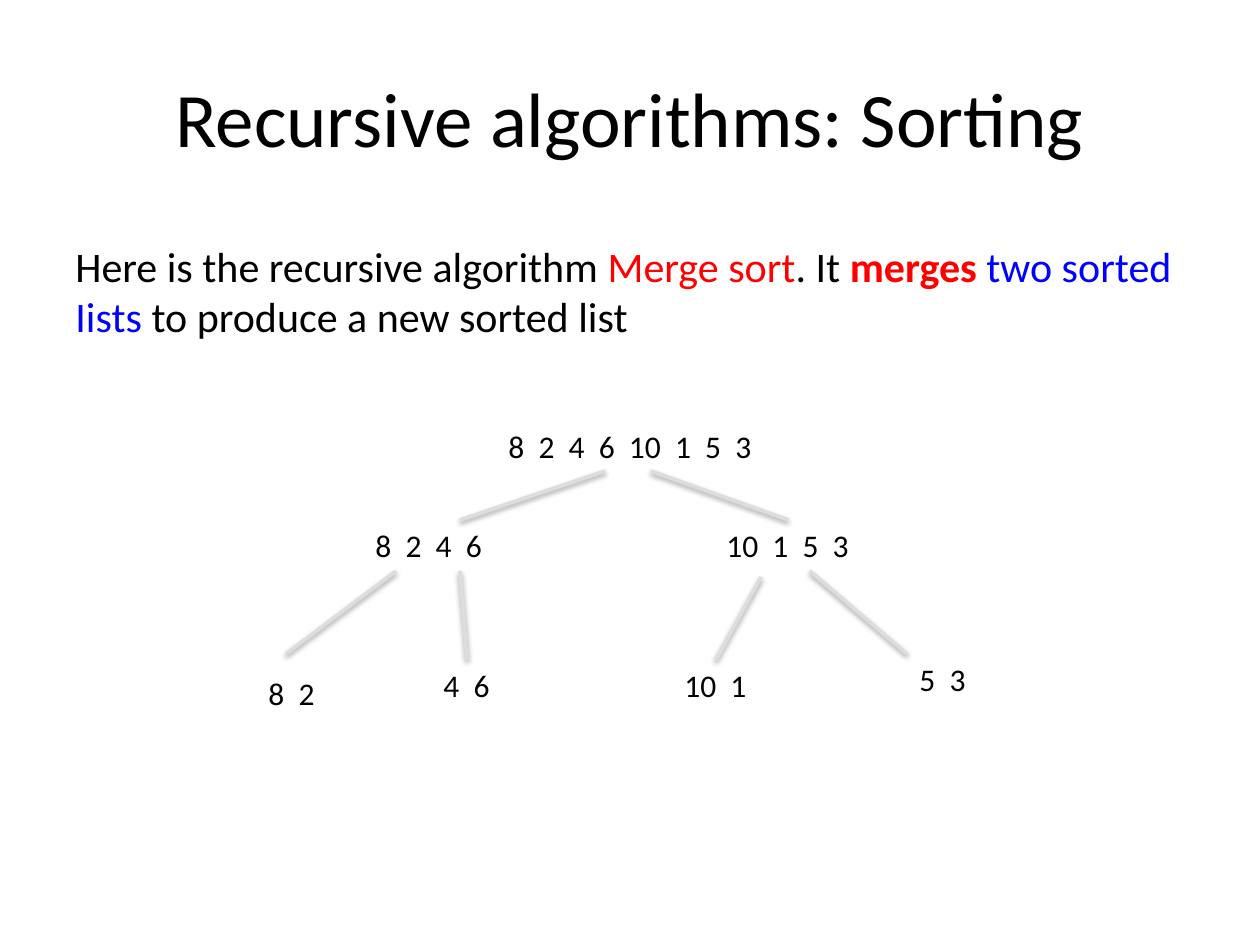
"""Build the merge sort slide with its tree of list splits."""
from lxml.etree import fromstring
from pptx import Presentation
from pptx.dml.color import RGBColor
from pptx.enum.shapes import MSO_CONNECTOR
from pptx.enum.text import MSO_ANCHOR, PP_ALIGN
from pptx.oxml.ns import nsdecls
from pptx.util import Emu, Pt

COLORS = {"black": "000000", "red": "FF0000", "blue": "0000FF", "branch": "DDDDDD"}
FONT = "Calibri"
SHADOW = (
    f'<a:effectLst {nsdecls("a")}>'
    '<a:outerShdw blurRad="40000" dist="20000" dir="5400000" rotWithShape="0">'
    f'<a:srgbClr val="{COLORS["black"]}"><a:alpha val="38000"/></a:srgbClr>'
    "</a:outerShdw></a:effectLst>"
)


def px(*lengths):
    return [Emu(round(n * 914400 / 126)) for n in lengths]


def style(font, size, color="black"):
    font.name, font.size = FONT, Pt(size)
    font.color.rgb = RGBColor.from_string(COLORS[color])


prs = Presentation()
prs.slide_width, prs.slide_height = px(1260, 945)
s = prs.slides.add_slide(prs.slide_layouts[5])

title = s.shapes.title
title.left, title.top, title.width, title.height = px(63, 38, 1134, 158)
tf = title.text_frame
tf.text = "Recursive algorithms: Sorting"
tf.vertical_anchor = MSO_ANCHOR.MIDDLE
p = tf.paragraphs[0]
p.alignment = PP_ALIGN.CENTER
style(p.font, 44)

intro = [
    [
        ("Here is the recursive algorithm ", "black", False),
        ("Merge sort", "red", False),
        (". It ", "black", False),
        ("merges ", "red", True),
        ("two sorted", "blue", False),
    ],
    [("Iists ", "blue", False), ("to produce a new sorted list", "black", False)],
]
tf = s.shapes.add_textbox(*px(63, 234, 1130, 115)).text_frame
tf.word_wrap = False
for i, runs in enumerate(intro):
    p = tf.add_paragraph() if i else tf.paragraphs[0]
    for text, color, bold in runs:
        r = p.add_run()
        r.text = text
        r.font.bold = bold
        style(r.font, 24, color)

lists = [
    ("8  2  4  6  10  1  5  3", 496, 421, 271),
    ("8  2  4  6", 363, 520, 134),
    ("10  1  5  3", 714, 520, 149),
    ("8  2", 256, 668, 72),
    ("4  6", 431, 660, 72),
    ("10  1", 672, 660, 88),
    ("5  3", 907, 654, 72),
]
nodes = {}
for text, x, y, w in lists:
    sp = s.shapes.add_textbox(*px(x, y, w, 50))
    tf = sp.text_frame
    tf.word_wrap = False
    p = tf.paragraphs[0]
    p.text = text
    style(p.font, 18)
    nodes[text] = sp

branches = [
    (605, 471, 460, 520, None),
    (651, 471, 789, 520, "10  1  5  3"),
    (396, 571, 286, 654, None),
    (761, 577, 716, 660, "10  1"),
    (810, 571, 907, 654, None),
    (460, 571, 467, 660, "4  6"),
]
for x1, y1, x2, y2, child in branches:
    line = s.shapes.add_connector(MSO_CONNECTOR.STRAIGHT, *px(x1, y1, x2, y2))
    if child:
        line.end_connect(nodes[child], 0)
    line.line.color.rgb = RGBColor.from_string(COLORS["branch"])
    line.line.width = Pt(2)
    line._element.spPr.append(fromstring(SHADOW))

prs.save("out.pptx")
